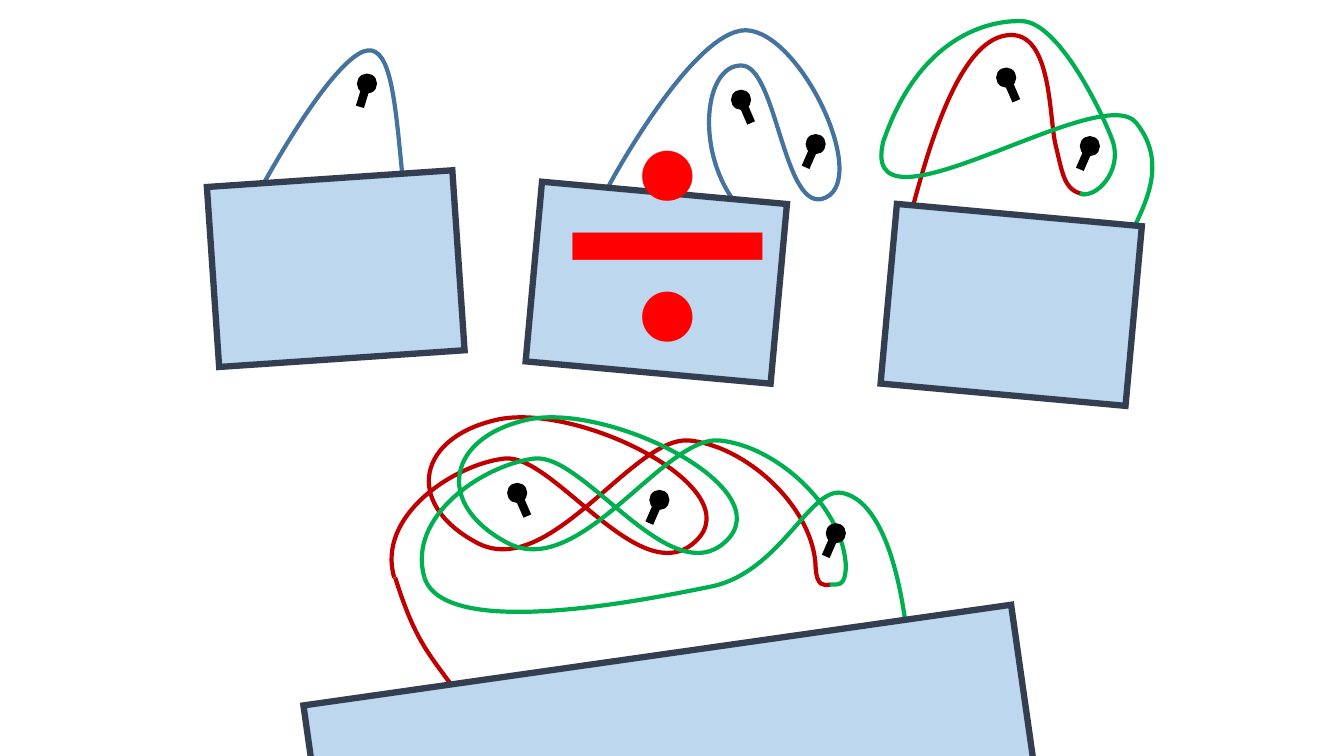
from lxml import etree
from pptx import Presentation
from pptx.dml.color import RGBColor
from pptx.enum.shapes import MSO_CONNECTOR, MSO_SHAPE
from pptx.enum.text import MSO_AUTO_SIZE
from pptx.oxml.ns import qn
from pptx.util import Inches, Pt

RECTANGLE, OVAL = MSO_SHAPE.RECTANGLE, MSO_SHAPE.OVAL
STRAIGHT = MSO_CONNECTOR.STRAIGHT
GROW = MSO_AUTO_SIZE.SHAPE_TO_FIT_TEXT

BLACK = RGBColor(0x00, 0x00, 0x00)
ROPE_BLUE = RGBColor(0x43, 0x73, 0x9E)
ROPE_RED = RGBColor(0xC0, 0x00, 0x00)
ROPE_GREEN = RGBColor(0x00, 0xB0, 0x50)
SIGN_RED = RGBColor(0xFF, 0x00, 0x00)
PICTURE_FILL = RGBColor(0xBD, 0xD7, 0xEE)
FRAME_LINE = RGBColor(0x33, 0x3F, 0x50)

HEAD_SIZE = 0.2
NAIL_LENGTH = 0.23
EXTENT_STEPS = 24
LOOP_SHIFT = 0.3

ONE_NAIL_ROPE = [(2.61, 1.83), (3, 1.13), (3.43, 0.52), (3.65, 0.5),
                 (3.88, 0.48), (3.92, 1.02), (3.99, 1.73)]
TWO_NAIL_ROPE = [(7.27, 1.98), (6.9, 1.46), (6.99, 0.65), (7.35, 0.65),
                 (7.71, 0.64), (7.77, 2.16), (8.19, 1.96),
                 (8.62, 1.76), (7.94, 0.32), (7.4, 0.3),
                 (6.87, 0.29), (6.02, 1.87), (6.03, 1.86)]
SPLIT_ROPES = [
    (ROPE_RED, [(9.01, 2.21), (9.13, 1.79), (9.43, 0.49), (9.94, 0.36),
                (10.44, 0.23), (10.4, 1.16), (10.47, 1.44),
                (10.54, 1.72), (10.55, 1.9), (10.76, 1.93)]),
    (ROPE_GREEN, [(8.77, 1.38), (9.11, 0.41), (9.75, 0.2), (10.13, 0.21),
                  (10.5, 0.21), (10.94, 1.13), (11.04, 1.41),
                  (11.13, 1.7), (10.87, 1.98), (10.71, 1.92)]),
    (ROPE_GREEN, [(8.77, 1.37), (8.45, 2.49), (10.92, 0.77), (11.27, 1.22),
                  (11.63, 1.67), (11.28, 2.13), (11.2, 2.38)]),
]
DOUBLE_LOOP = [(3.91, 5.73), (3.73, 5.12), (4.5, 4.61), (5, 4.55),
               (5.49, 4.49), (6.35, 5.89), (6.9, 5.37),
               (7.45, 4.85), (5.76, 4), (4.95, 4.16),
               (4.14, 4.33), (4, 4.99), (4.72, 5.38),
               (5.44, 5.78), (6.27, 4.33), (6.83, 4.37),
               (7.4, 4.42), (8.08, 5.04), (8.09, 5.64)]
LOOP_ENDS = [
    (ROPE_RED, [(8.09, 5.63), (8.1, 5.82), (8.17, 5.81), (8.24, 5.8)]),
    (ROPE_GREEN, [(8.39, 5.63), (8.38, 5.81), (8.33, 5.8), (8.23, 5.8)]),
    (ROPE_GREEN, [(4.21, 5.73), (4.41, 6.35), (6.36, 5.96), (7.05, 5.82),
                  (7.74, 5.68), (8.03, 4.83), (8.35, 4.89),
                  (8.67, 4.95), (8.88, 5.45), (8.98, 6.17)]),
    (ROPE_RED, [(3.92, 5.73), (4.11, 6.34), (4.25, 6.48), (4.48, 6.8)]),
]


def bezier_point(start, first, second, end, t):
    """Return the point at t on a cubic curve, in EMU."""
    u = 1 - t
    return tuple(
        Inches(u**3 * a + 3 * u * u * t * b + 3 * u * t * t * c + t**3 * d)
        for a, b, c, d in zip(start, first, second, end))


def add_rope(shapes, color, points, shift=0):
    """Draw a rope of cubic curves, moved right by shift."""
    points = [(x + shift, y) for x, y in points]
    starts = range(0, len(points) - 1, 3)
    extent = [bezier_point(*points[i:i + 4], step / EXTENT_STEPS)
              for i in starts for step in range(1, EXTENT_STEPS + 1)]
    x, y = points[0]
    builder = shapes.build_freeform(Inches(x), Inches(y))
    builder.add_line_segments(extent, close=False)
    rope = builder.convert_to_shape()
    outline = next(rope._element.iter(qn("a:path")))
    for segment in outline.findall(qn("a:lnTo")):
        outline.remove(segment)
    for i in starts:
        curve = etree.SubElement(outline, qn("a:cubicBezTo"))
        for x, y in points[i + 1:i + 4]:
            etree.SubElement(curve, qn("a:pt"), x=str(Inches(x) - rope.left),
                             y=str(Inches(y) - rope.top))
    rope.shadow.inherit = False
    rope.fill.background()
    rope.line.color.rgb = color
    rope.line.width = Pt(3)


def add_nail(shapes, x, y, lean):
    """Draw a nail with its head centred at x, y and its tip moved by lean."""
    corner = HEAD_SIZE / 2
    head = shapes.add_shape(OVAL, Inches(x - corner), Inches(y - corner),
                            Inches(HEAD_SIZE), Inches(HEAD_SIZE))
    head.shadow.inherit = False
    head.fill.solid()
    head.fill.fore_color.rgb = BLACK
    head.line.fill.background()
    shaft = shapes.add_connector(
        STRAIGHT, Inches(x + lean), Inches(y + NAIL_LENGTH), Inches(x), Inches(y))
    shaft.line.color.rgb = BLACK
    shaft.line.width = Pt(6)
    etree.SubElement(shaft._element.spPr, qn("a:effectLst"))


def add_frame(shapes, left, top, rotation, width=2.44):
    """Draw a tilted hanging frame with sharp corners."""
    frame = shapes.add_shape(RECTANGLE, Inches(left), Inches(top),
                             Inches(width), Inches(1.79))
    frame.rotation = rotation
    frame.shadow.inherit = False
    frame.fill.solid()
    frame.fill.fore_color.rgb = PICTURE_FILL
    frame.line.color.rgb = FRAME_LINE
    frame.line.width = Pt(4.5)
    border = frame._element.spPr.find(qn("a:ln"))
    etree.SubElement(border, qn("a:miter"), lim="800000")


def add_sign(shapes, text):
    """Write the large sign over the second frame."""
    box = shapes.add_textbox(Inches(5.49), Inches(-0.45),
                             Inches(1.62), Inches(5.15))
    box.text_frame.word_wrap = True
    box.text_frame.auto_size = GROW
    box.text_frame.text = text
    font = box.text_frame.paragraphs[0].runs[0].font
    font.name = "Calibri"
    font.size = Pt(300)
    font.color.rgb = SIGN_RED


def add_group(shapes):
    """Add an empty group and return its shapes."""
    return shapes.add_group_shape().shapes


def main():
    """Build the slide of frames hung on nails and save the deck."""
    deck = Presentation()
    deck.slide_width, deck.slide_height = Inches(13.33), Inches(7.5)
    shapes = deck.slides.add_slide(deck.slide_layouts[6]).shapes

    one_nail = add_group(shapes)
    add_rope(one_nail, ROPE_BLUE, ONE_NAIL_ROPE)
    add_nail(one_nail, 3.64, 0.83, -0.07)
    add_frame(one_nail, 2.11, 1.77, 356.1)

    two_nails = add_group(shapes)
    add_nail(two_nails, 8.09, 1.43, -0.1)
    add_nail(two_nails, 7.35, 0.99, 0.1)
    add_rope(two_nails, ROPE_BLUE, TWO_NAIL_ROPE)
    add_frame(two_nails, 5.29, 1.91, 5.2)
    add_sign(shapes, "÷")

    add_nail(add_group(shapes), 10.81, 1.45, -0.1)
    add_nail(add_group(shapes), 9.98, 0.77, 0.1)
    for color, points in SPLIT_ROPES:
        add_rope(shapes, color, points)
    add_frame(shapes, 8.81, 2.13, 5.2)

    add_nail(add_group(shapes), 5.13, 4.89, 0.1)
    add_nail(add_group(shapes), 6.54, 4.96, -0.1)
    add_rope(shapes, ROPE_RED, DOUBLE_LOOP)
    add_rope(shapes, ROPE_GREEN, DOUBLE_LOOP, LOOP_SHIFT)
    add_nail(add_group(shapes), 8.29, 5.29, -0.1)
    for color, points in LOOP_ENDS:
        add_rope(shapes, color, points)
    add_frame(shapes, 3.1, 6.49, 351.9, width=7.09)

    deck.save("out.pptx")


if __name__ == "__main__":
    main()
